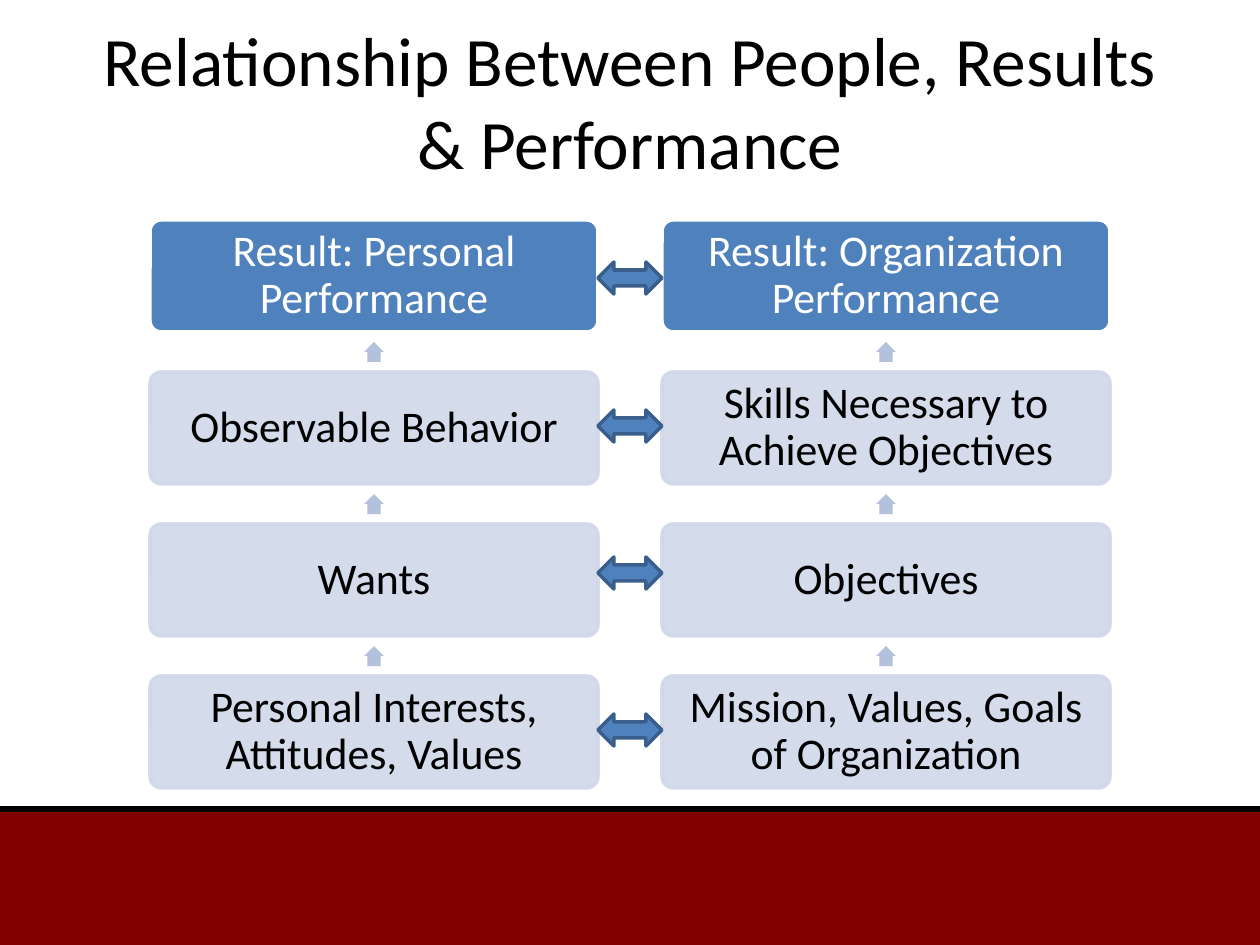
from pptx import Presentation
from pptx.dml.color import RGBColor
from pptx.enum.shapes import MSO_CONNECTOR, MSO_SHAPE
from pptx.enum.text import MSO_ANCHOR, PP_ALIGN
from pptx.oxml.ns import qn
from pptx.util import Pt
from lxml.etree import SubElement

TITLE = "Relationship Between People, Results & Performance"
COLUMNS = [
    ["Result: Personal Performance", "Observable Behavior", "Wants",
     "Personal Interests, Attitudes, Values"],
    ["Result: Organization Performance", "Skills Necessary to Achieve Objectives",
     "Objectives", "Mission, Values, Goals of Organization"],
]
COLORS = {"blue": "4F81BD", "pale": "D0D8E8", "step": "B3C1DB", "edge": "3A5F8C",
          "maroon": "800000", "white": "FFFFFF", "black": "000000"}

EMU_PER_INCH, PX_PER_INCH = 914400, 126
PAGE_W, PAGE_H = 1260, 945
BAND_TOP = 809
BOX_W, BOX_H = 448, 112
LEFT, TOP = 150, 220
COLUMN_STEP, ROW_STEP = 512, 152
STEP_SIZE = 20
LINK_TOPS = [262, 410, 557, 714]
LINK_H = 32


def px(length):
    return round(length * EMU_PER_INCH / PX_PER_INCH)


def color(name):
    return RGBColor.from_string(COLORS[name])


def set_opacity(color_format_parent, percent):
    """Make the solid fill found under an XML element partly transparent."""
    srgb = color_format_parent.find(qn("a:solidFill")).find(qn("a:srgbClr"))
    SubElement(srgb, qn("a:alpha"), val=str(percent * 1000))


def add_shape(page, kind, left, top, width, height, fill, line=None):
    shape = page.shapes.add_shape(kind, px(left), px(top), px(width), px(height))
    shape.shadow.inherit = False
    shape.fill.solid()
    shape.fill.fore_color.rgb = color(fill)
    if line:
        shape.line.color.rgb = color(line)
        shape.line.width = Pt(2)
    else:
        shape.line.fill.background()
    return shape


def write(shape, text, size, ink):
    frame = shape.text_frame
    frame.word_wrap = True
    frame.vertical_anchor = MSO_ANCHOR.MIDDLE
    para = frame.paragraphs[0]
    para.alignment = PP_ALIGN.CENTER
    span = para.add_run()
    span.text = text
    span.font.name = "Calibri"
    span.font.size = Pt(size)
    span.font.color.rgb = color(ink)
    return frame


def add_band(page):
    add_shape(page, MSO_SHAPE.RECTANGLE, 0, BAND_TOP, PAGE_W, PAGE_H - BAND_TOP,
              "maroon", "maroon")
    rule = page.shapes.add_connector(MSO_CONNECTOR.STRAIGHT, 0, px(BAND_TOP),
                                     px(PAGE_W), px(BAND_TOP))
    rule.line.color.rgb = color("black")
    rule.line.width = Pt(3)
    SubElement(rule.element.spPr, qn("a:effectLst"))


def add_box(page, left, top, text, is_result):
    fill, line, ink = ("blue", "white", "white") if is_result else ("pale", "pale", "black")
    box = add_shape(page, MSO_SHAPE.ROUNDED_RECTANGLE, left, top, BOX_W, BOX_H, fill, line)
    box.adjustments[0] = 0.1
    if not is_result:
        properties = box.element.spPr
        set_opacity(properties, 90)
        set_opacity(properties.find(qn("a:ln")), 90)
    frame = write(box, text, 25, ink)
    frame.margin_left = frame.margin_right = px(4)
    frame.margin_top = frame.margin_bottom = px(4)
    frame.paragraphs[0].line_spacing = 0.9


def add_step_arrow(page, left, top):
    """Small upward arrow centred in the gap above the box at left, top."""
    gap = ROW_STEP - BOX_H
    arrow = add_shape(page, MSO_SHAPE.RIGHT_ARROW, left + (BOX_W - STEP_SIZE) / 2,
                      top - (gap + STEP_SIZE) / 2, STEP_SIZE, STEP_SIZE, "step")
    arrow.adjustments[0] = 0.67
    arrow.adjustments[1] = 0.5
    arrow.rotation = 270


def main():
    deck = Presentation()
    deck.slide_width, deck.slide_height = px(PAGE_W), px(PAGE_H)
    page = deck.slides.add_slide(deck.slide_layouts[6])

    add_band(page)
    title = page.shapes.add_textbox(px(63), px(21), px(1134), px(158))
    write(title, TITLE, 39.6, "black")

    for column, labels in enumerate(COLUMNS):
        left = LEFT + column * COLUMN_STEP
        for row, label in enumerate(labels):
            top = TOP + row * ROW_STEP
            if row:
                add_step_arrow(page, left, top)
            add_box(page, left, top, label, is_result=row == 0)

    for top in LINK_TOPS:
        add_shape(page, MSO_SHAPE.LEFT_RIGHT_ARROW, LEFT + BOX_W, top,
                  COLUMN_STEP - BOX_W, LINK_H, "blue", "edge")

    deck.save("out.pptx")


if __name__ == "__main__":
    main()
